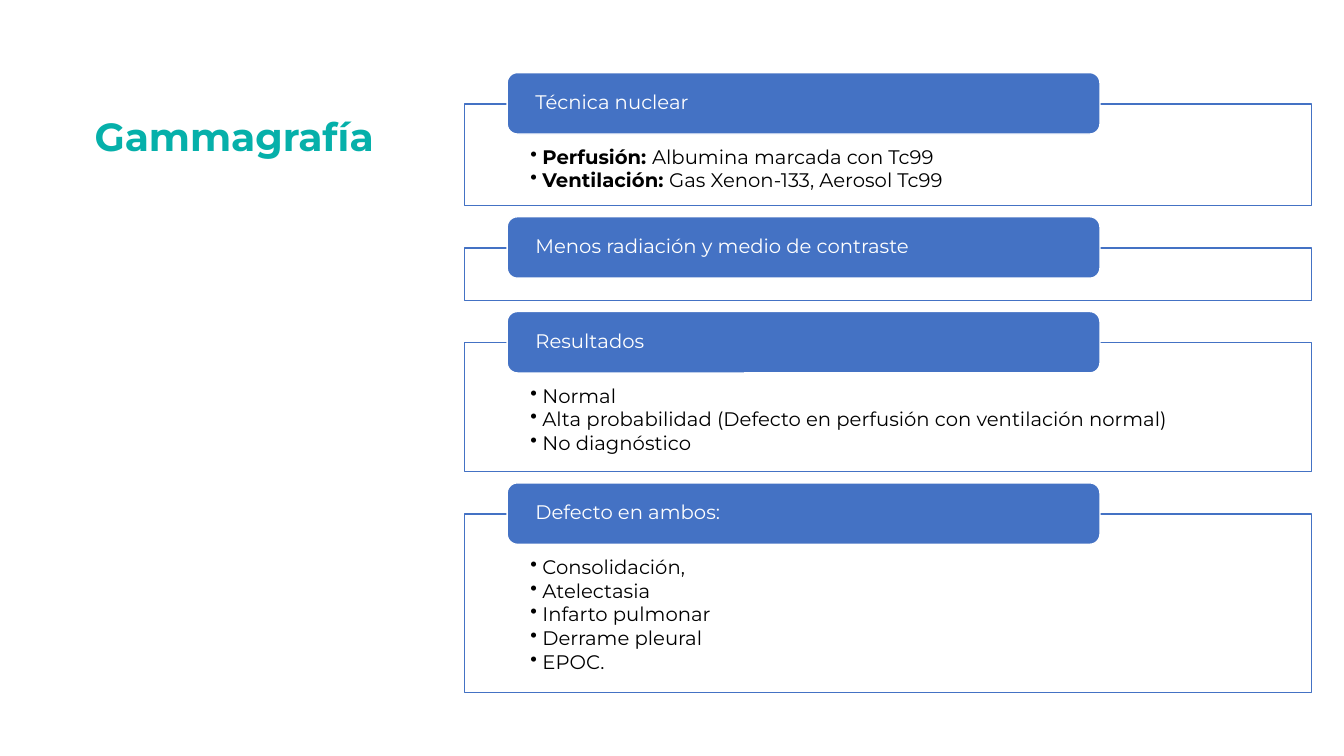
from dataclasses import dataclass
from lxml.etree import SubElement
from pptx import Presentation
from pptx.dml.color import RGBColor
from pptx.enum.shapes import MSO_SHAPE
from pptx.enum.text import MSO_ANCHOR, PP_ALIGN
from pptx.oxml.ns import qn
from pptx.util import Inches, Pt


@dataclass(frozen=True)
class Theme:
    """Colours, font and type sizes of the slide."""
    blue: str = "4472C4"
    white: str = "FFFFFF"
    black: str = "000000"
    teal: str = "06B0AA"
    face: str = "Montserrat"
    head: int = 28
    body: int = 14


THEME = Theme()
LEFT, WIDTH, TOP, GAP = 4.61, 8.4, 1.03, 0.42
PANELS = [
    ("Técnica nuclear", 1.01, [("Perfusión: ", "Albumina marcada con Tc99"),
                               ("Ventilación: ", "Gas Xenon-133, Aerosol Tc99")]),
    ("Menos radiación y medio de contraste", 0.52, []),
    ("Resultados", 1.28, [
        ("", "Normal"),
        ("", "Alta probabilidad (Defecto en perfusión con ventilación normal)"),
        ("", "No diagnóstico")]),
    ("Defecto en ambos:", 1.77, [
        ("", "Consolidación,"), ("", "Atelectasia"), ("", "Infarto pulmonar"),
        ("", "Derrame pleural"), ("", "EPOC.")]),
]


def apply(item, values):
    """Set each attribute named in values on item."""
    for name, value in values.items():
        setattr(item, name, value)


def frame(shape, anchor, pads):
    """Prepare the text frame of a shape with four insets."""
    sides = ("left", "top", "right", "bottom")
    values = {f"margin_{side}": Inches(pad) for side, pad in zip(sides, pads)}
    apply(shape.text_frame, {"word_wrap": True, "vertical_anchor": anchor, **values})
    return shape.text_frame


def write(para, text, color, size=THEME.body, bold=False):
    """Add one styled run to a left-aligned paragraph."""
    apply(para, {"alignment": PP_ALIGN.LEFT, "line_spacing": 0.9})
    run = para.add_run()
    apply(run, {"text": text})
    apply(run.font, {"name": THEME.face, "size": Pt(size), "bold": bold})
    run.font.color.rgb = RGBColor.from_string(color)


def bullet(para):
    """Give a paragraph a hanging round bullet."""
    props = para._p.get_or_add_pPr()
    indent = Inches(0.12)
    props.set("marL", str(indent))
    props.set("indent", str(-indent))
    SubElement(props, qn("a:buChar")).set("char", "•")
    apply(para, {"space_after": Pt(1.8)})


def block(slide, kind, area, fill, line):
    """Draw a filled and outlined shape."""
    shape = slide.shapes.add_shape(kind, *map(Inches, area))
    shape.shadow.inherit = False
    shape.fill.solid()
    shape.fill.fore_color.rgb = RGBColor.from_string(fill)
    shape.line.color.rgb = RGBColor.from_string(line)
    shape.line.width = Pt(1)
    return shape


def panel(slide, top, name, height, items):
    """Draw an outlined list with its heading tab."""
    box = block(slide, MSO_SHAPE.RECTANGLE, (LEFT, top, WIDTH, height),
                THEME.white, THEME.blue)
    if items:
        text = frame(box, MSO_ANCHOR.TOP, (0.65, 0.43, 0.65, 0.11))
        for index, (lead, rest) in enumerate(items):
            para = text.add_paragraph() if index else text.paragraphs[0]
            bullet(para)
            if lead:
                write(para, lead, THEME.black, bold=True)
            write(para, rest, THEME.black)
    tab = block(slide, MSO_SHAPE.ROUNDED_RECTANGLE,
                (LEFT + 0.42, top - 0.31, WIDTH * 0.7, 0.61),
                THEME.blue, THEME.white)
    text = frame(tab, MSO_ANCHOR.MIDDLE, (0.25, 0, 0.25, 0))
    write(text.paragraphs[0], name, THEME.white)


def title(slide, words):
    """Add the slide title."""
    box = slide.shapes.add_textbox(*map(Inches, (0.84, 0.84, 11.88, 1.07)))
    text = frame(box, MSO_ANCHOR.MIDDLE, (0.1, 0.05, 0.1, 0.05))
    write(text.paragraphs[0], words, THEME.teal, THEME.head, True)


def main():
    """Build and save the slide."""
    deck = Presentation()
    apply(deck, {"slide_width": Inches(13.33), "slide_height": Inches(7.5)})
    slide = deck.slides.add_slide(deck.slide_layouts[6])
    top = TOP
    for name, height, items in PANELS:
        panel(slide, top, name, height, items)
        top += height + GAP
    title(slide, "Gammagrafía")
    deck.save("out.pptx")


if __name__ == "__main__":
    main()
